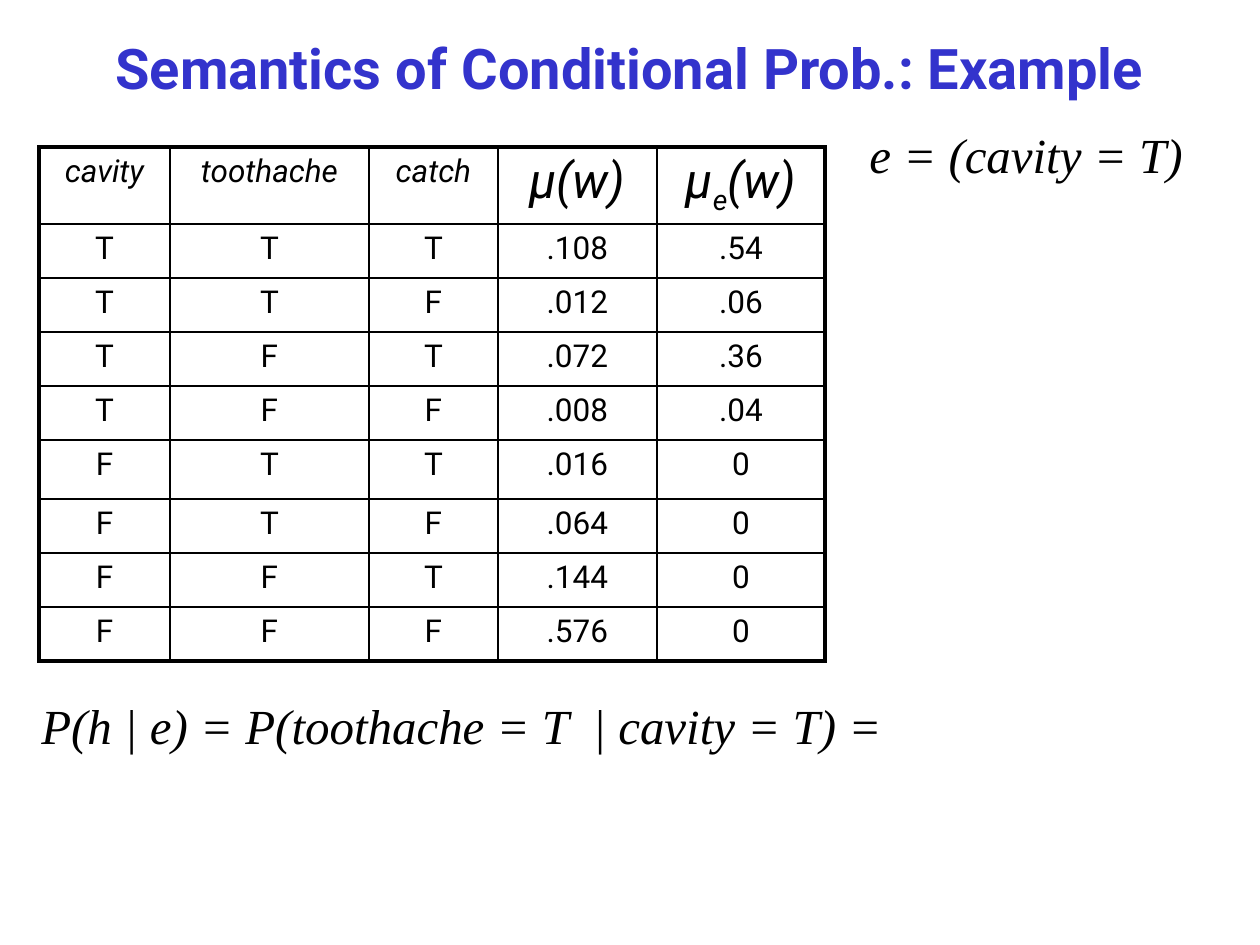
from dataclasses import dataclass

from lxml import etree
from pptx import Presentation
from pptx.dml.color import RGBColor
from pptx.enum.text import MSO_ANCHOR, MSO_AUTO_SIZE, PP_ALIGN
from pptx.oxml.ns import qn
from pptx.util import Emu, Pt

CENTER, LEFT = PP_ALIGN.CENTER, PP_ALIGN.LEFT
MIDDLE = MSO_ANCHOR.MIDDLE
NO_FIT, GROW = MSO_AUTO_SIZE.NONE, MSO_AUTO_SIZE.SHAPE_TO_FIT_TEXT
PX = 914400 / 126


@dataclass(frozen=True)
class Theme:
    title_color = RGBColor(0x33, 0x33, 0xCC)
    text_color = RGBColor(0, 0, 0)
    cell_fill = RGBColor(255, 255, 255)
    border_color = "000000"
    sans = "Roboto"
    serif = "Times New Roman"
    title_size = 32
    formula_size = 28
    cell_size = 18
    outer_border = 2.25
    inner_border = 1


theme = Theme()


def write_text(frame, text, *, size, font, color=theme.text_color, bold=False,
               italic=False, align=LEFT, spacing_tag=None):
    """Fill the first paragraph; parts between underscores become subscripts."""
    paragraph = frame.paragraphs[0]
    paragraph.alignment = align
    if spacing_tag:
        properties = paragraph._p.get_or_add_pPr()
        spacing = etree.SubElement(properties, qn(spacing_tag))
        etree.SubElement(spacing, qn("a:spcPct")).set("val", "20000")
    for index, part in enumerate(text.split("_")):
        run = paragraph.add_run()
        run.text = part
        run.font.size = Pt(size)
        run.font.name = font
        run.font.bold = bold
        run.font.italic = italic
        run.font.color.rgb = color
        if index % 2:
            run._r.get_or_add_rPr().set("baseline", "-25000")


def set_border(cell, side, width):
    line = etree.SubElement(cell._tc.get_or_add_tcPr(), qn(f"a:ln{side}"))
    line.set("w", str(Pt(width)))
    fill = etree.SubElement(line, qn("a:solidFill"))
    etree.SubElement(fill, qn("a:srgbClr")).set("val", theme.border_color)


presentation = Presentation()
presentation.slide_width = Emu(round(1260 * PX))
presentation.slide_height = Emu(round(945 * PX))
slide = presentation.slides.add_slide(presentation.slide_layouts[5])

# Title
title = slide.shapes.title
title.left, title.top = Emu(0), Emu(0)
title.width, title.height = Emu(round(1260 * PX)), Emu(round(135 * PX))
title.text_frame.auto_size = NO_FIT
title.text_frame.vertical_anchor = MIDDLE
write_text(title.text_frame, "Semantics of Conditional Prob.: Example",
           size=theme.title_size, font=theme.sans, color=theme.title_color,
           bold=True, align=CENTER, spacing_tag="a:spcAft")

# Probability table
headers = ["cavity", "toothache", "catch", "µ(w)", "µ_e_(w)"]
worlds = [
    ["T", "T", "T", ".108", ".54"],
    ["T", "T", "F", ".012", ".06"],
    ["T", "F", "T", ".072", ".36"],
    ["T", "F", "F", ".008", ".04"],
    ["F", "T", "T", ".016", "0"],
    ["F", "T", "F", ".064", "0"],
    ["F", "F", "T", ".144", "0"],
    ["F", "F", "F", ".576", "0"],
]
rows = [headers] + worlds
column_widths = [131, 199, 129, 159, 168]
row_heights = [58, 54, 54, 54, 54, 59, 54, 54, 54]
last_row, last_column = len(rows) - 1, len(headers) - 1

table = slide.shapes.add_table(
    len(rows), len(headers), Emu(round(39 * PX)), Emu(round(147 * PX)),
    Emu(round(sum(column_widths) * PX)), Emu(round(sum(row_heights) * PX))).table
table.first_row = False
table.horz_banding = False
for column, width in zip(table.columns, column_widths):
    column.width = Emu(round(width * PX))
for row, height in zip(table.rows, row_heights):
    row.height = Emu(round(height * PX))

for row_index, values in enumerate(rows):
    for column_index, value in enumerate(values):
        cell = table.cell(row_index, column_index)
        is_header = row_index == 0
        is_formula = is_header and "µ" in value
        write_text(cell.text_frame, value, font=theme.sans, italic=is_header,
                   size=theme.formula_size if is_formula else theme.cell_size,
                   align=CENTER, spacing_tag="a:spcBef")
        outer_sides = {"L": column_index == 0, "R": column_index == last_column,
                       "T": row_index == 0, "B": row_index == last_row}
        for side, is_outer in outer_sides.items():
            set_border(cell, side, theme.outer_border if is_outer else theme.inner_border)
        cell.fill.solid()
        cell.fill.fore_color.rgb = theme.cell_fill

# Formulas
formulas = [
    ("e = (cavity = T)", 857, 118, 339),
    ("P(h | e) = P(toothache = T  | cavity = T) =", 29, 689, 868),
]
for text, left, top, width in formulas:
    formula = slide.shapes.add_textbox(Emu(round(left * PX)), Emu(round(top * PX)),
                                       Emu(round(width * PX)), Emu(round(72 * PX)))
    formula.text_frame.word_wrap = False
    formula.text_frame.auto_size = GROW
    write_text(formula.text_frame, text, size=theme.formula_size,
               font=theme.serif, italic=True)

presentation.save("out.pptx")
